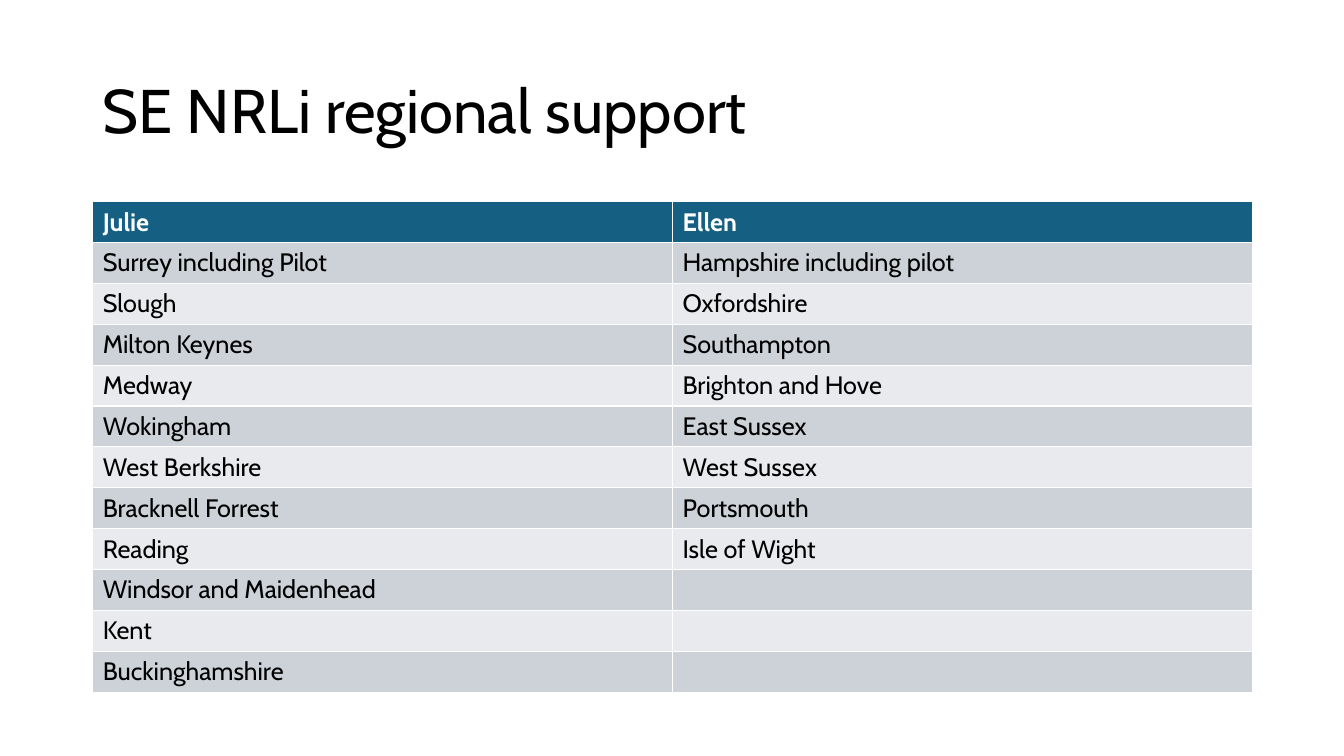
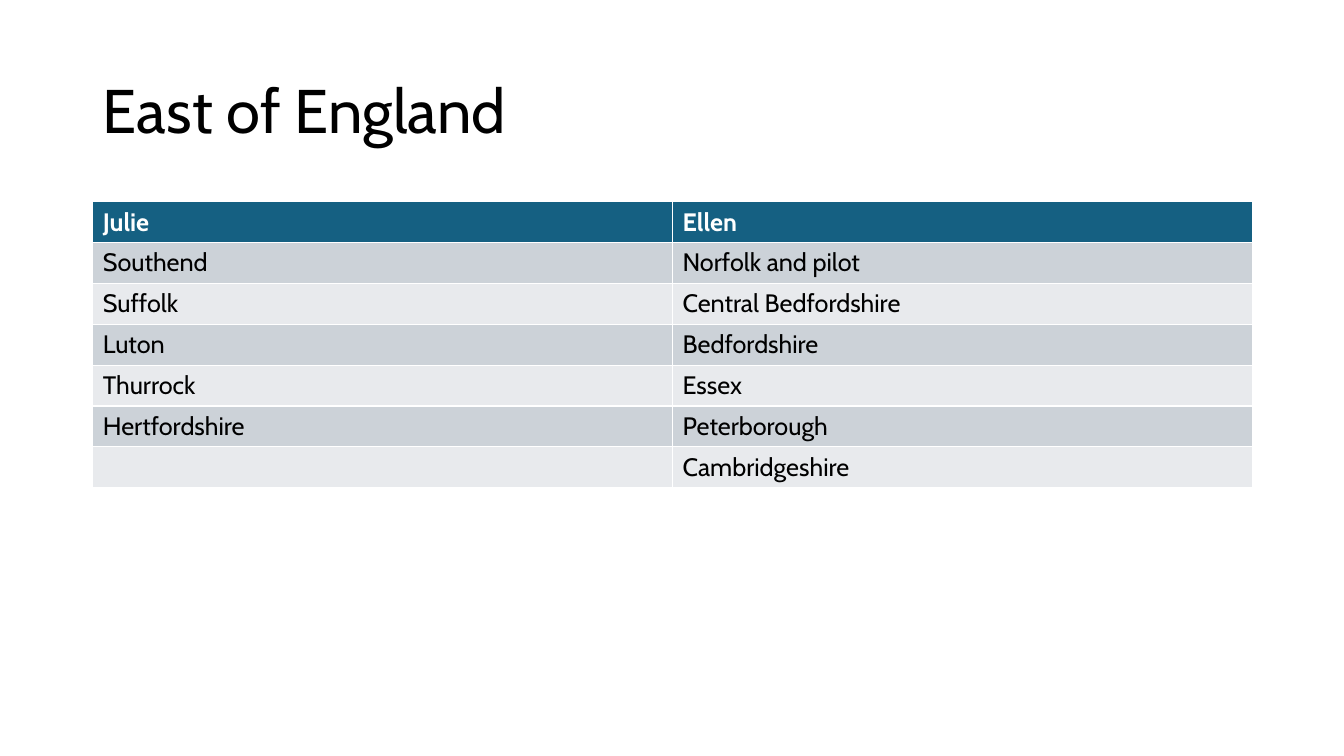
from itertools import zip_longest
from pptx import Presentation
from pptx.dml import color
from pptx.enum import text
from pptx.util import Inches, Pt

FONT = "Cabin"
BLACK, WHITE = "000000", "FFFFFF"
TEAL, BANDS = "156082", ("E8EAED", "CCD2D8")
LEFT, WIDTH, ROW = 0.92, 11.5, 4.87 / 12

PAGES = [
    ("SE NRLi regional support",
     ["Surrey including Pilot", "Slough", "Milton Keynes", "Medway",
      "Wokingham", "West Berkshire", "Bracknell Forrest", "Reading",
      "Windsor and Maidenhead", "Kent", "Buckinghamshire"],
     ["Hampshire including pilot", "Oxfordshire", "Southampton",
      "Brighton and Hove", "East Sussex", "West Sussex", "Portsmouth",
      "Isle of Wight"]),
    ("East of England",
     ["Southend", "Suffolk", "Luton", "Thurrock", "Hertfordshire"],
     ["Norfolk and pilot", "Central Bedfordshire", "Bedfordshire", "Essex",
      "Peterborough", "Cambridgeshire"]),
]


def rgb(code):
    return color.RGBColor.from_string(code)


def style(para, size, tint, bold=False):
    font = para.font
    font.name, font.size, font.bold = FONT, Pt(size), bold
    font.color.rgb = rgb(tint)


deck = Presentation()
deck.slide_width, deck.slide_height = Inches(13.33), Inches(7.5)
layout = deck.slide_layouts[5]
head = layout.placeholders[0]
head.left, head.top = Inches(LEFT), Inches(0.4)
head.width, head.height = Inches(WIDTH), Inches(1.45)

for name, julie, ellen in PAGES:
    slide = deck.slides.add_slide(layout)
    title = slide.shapes.title
    title.text = name
    title.text_frame.vertical_anchor = text.MSO_ANCHOR.MIDDLE
    para = title.text_frame.paragraphs[0]
    para.alignment = text.PP_ALIGN.LEFT
    para.line_spacing = 0.9
    style(para, 44, BLACK)

    rows = [("Julie", "Ellen"), *zip_longest(julie, ellen, fillvalue="")]
    table = slide.shapes.add_table(
        len(rows), 2, Inches(LEFT), Inches(2),
        Inches(WIDTH), Inches(ROW * len(rows))).table
    for i, row in enumerate(rows):
        for j, place in enumerate(row):
            cell = table.cell(i, j)
            cell.fill.solid()
            cell.fill.fore_color.rgb = rgb(BANDS[i % 2] if i else TEAL)
            if place:
                cell.text = place
            style(cell.text_frame.paragraphs[0], 18,
                  BLACK if i else WHITE, bold=i == 0)

deck.save("out.pptx")
